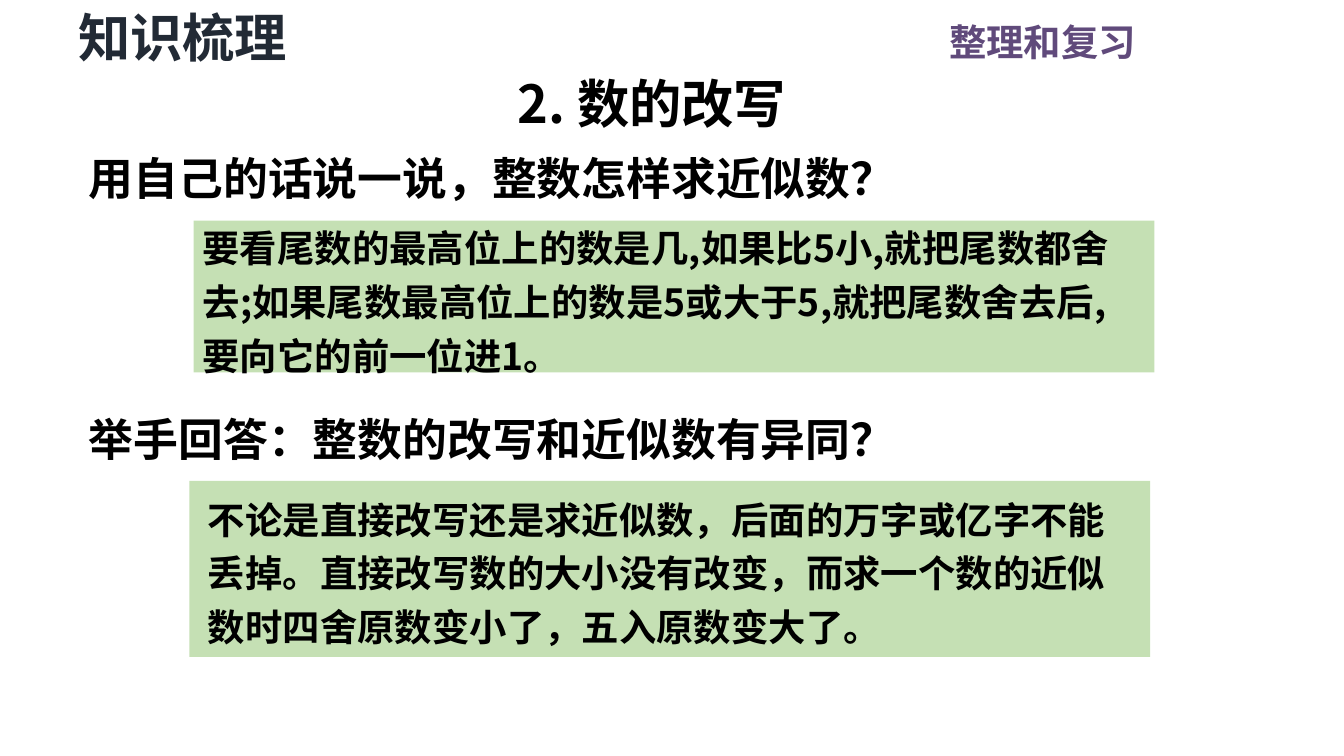
from dataclasses import dataclass

from lxml import etree
from pptx import Presentation
from pptx.dml.color import RGBColor
from pptx.enum.shapes import MSO_SHAPE
from pptx.enum.text import MSO_AUTO_SIZE, PP_ALIGN
from pptx.oxml.ns import qn
from pptx.slide import Slide
from pptx.util import Cm, Pt

RECTANGLE = MSO_SHAPE.RECTANGLE
GROW = MSO_AUTO_SIZE.SHAPE_TO_FIT_TEXT
LEFT, RIGHT = PP_ALIGN.LEFT, PP_ALIGN.RIGHT
FONT = "Noto Sans CJK SC"
BLACK = RGBColor(0x00, 0x00, 0x00)
SLATE = RGBColor(0x22, 0x2A, 0x35)
PURPLE = RGBColor(0x60, 0x4A, 0x7B)
GREEN = RGBColor(0xC5, 0xE0, 0xB4)
TIGHT = (0.18, 0.1)
ROOMY = (0.25, 0.13)


@dataclass(frozen=True)
class Area:
    left: float
    top: float
    width: float
    height: float

    def lengths(self) -> tuple[Cm, Cm, Cm, Cm]:
        return Cm(self.left), Cm(self.top), Cm(self.width), Cm(self.height)


@dataclass(frozen=True)
class Label:
    text: str
    area: Area
    size: int
    color: RGBColor = BLACK
    insets: tuple[float, float] = TIGHT
    spacing: float = 1.0
    align: PP_ALIGN = LEFT


@dataclass(frozen=True)
class Answer:
    panel: Area
    label: Label


HEADINGS = [
    Label("整理和复习", Area(14.71, 0.23, 7.01, 1.12), 20, PURPLE, ROOMY, align=RIGHT),
    Label("知识梳理", Area(1.3, 0, 5.13, 1.4), 28, SLATE),
    Label("2. 数的改写", Area(9.6, 1.24, 7.49, 1.4), 28),
]
QUESTIONS = [
    Label("用自己的话说一说，整数怎样求近似数？", Area(1.5, 2.54, 15.98, 1.42), 24, spacing=1.2),
    Label("举手回答：整数的改写和近似数有异同？", Area(1.5, 7.47, 16.59, 1.42), 24, spacing=1.2),
]
ANSWERS = [
    Answer(
        Area(3.66, 4.17, 18.16, 2.87),
        Label(
            "要看尾数的最高位上的数是几,如果比5小,就把尾数都舍去;"
            "如果尾数最高位上的数是5或大于5,就把尾数舍去后,要向它的前一位进1。",
            Area(3.58, 3.96, 17.78, 4.93), 20, insets=ROOMY, spacing=1.2,
        ),
    ),
    Answer(
        Area(3.58, 9.09, 18.16, 3.33),
        Label(
            "不论是直接改写还是求近似数，后面的万字或亿字不能丢掉。"
            "直接改写数的大小没有改变，而求一个数的近似数时四舍原数变小了，五入原数变大了。",
            Area(3.68, 9.09, 18.08, 3.2), 20, insets=ROOMY, spacing=1.2,
        ),
    ),
]


def apply_format(target: object, values: dict[str, object]) -> None:
    for name, value in values.items():
        setattr(target, name, value)


def draw_label(page: Slide, label: Label) -> None:
    frame = page.shapes.add_textbox(*label.area.lengths()).text_frame
    side, edge = (Cm(inset) for inset in label.insets)
    apply_format(frame, {
        "word_wrap": True, "auto_size": GROW,
        "margin_left": side, "margin_right": side,
        "margin_top": edge, "margin_bottom": edge,
    })
    para = frame.paragraphs[0]
    apply_format(para, {"alignment": label.align, "line_spacing": label.spacing})
    span = para.add_run()
    span.text = label.text
    apply_format(span.font, {"name": FONT, "size": Pt(label.size), "bold": True})
    span.font.color.rgb = label.color
    etree.SubElement(span.font._element, qn("a:ea"), typeface=FONT)


def draw_answer(page: Slide, answer: Answer) -> None:
    panel = page.shapes.add_shape(RECTANGLE, *answer.panel.lengths())
    panel.shadow.inherit = False
    panel.fill.solid()
    panel.fill.fore_color.rgb = GREEN
    panel.line.fill.background()
    draw_label(page, answer.label)


def main() -> None:
    deck = Presentation()
    apply_format(deck, {"slide_width": Cm(25.4), "slide_height": Cm(14.29)})
    page = deck.slides.add_slide(deck.slide_layouts[6])
    for label in HEADINGS + QUESTIONS:
        draw_label(page, label)
    for answer in ANSWERS:
        draw_answer(page, answer)
    deck.save("out.pptx")


if __name__ == "__main__":
    main()
